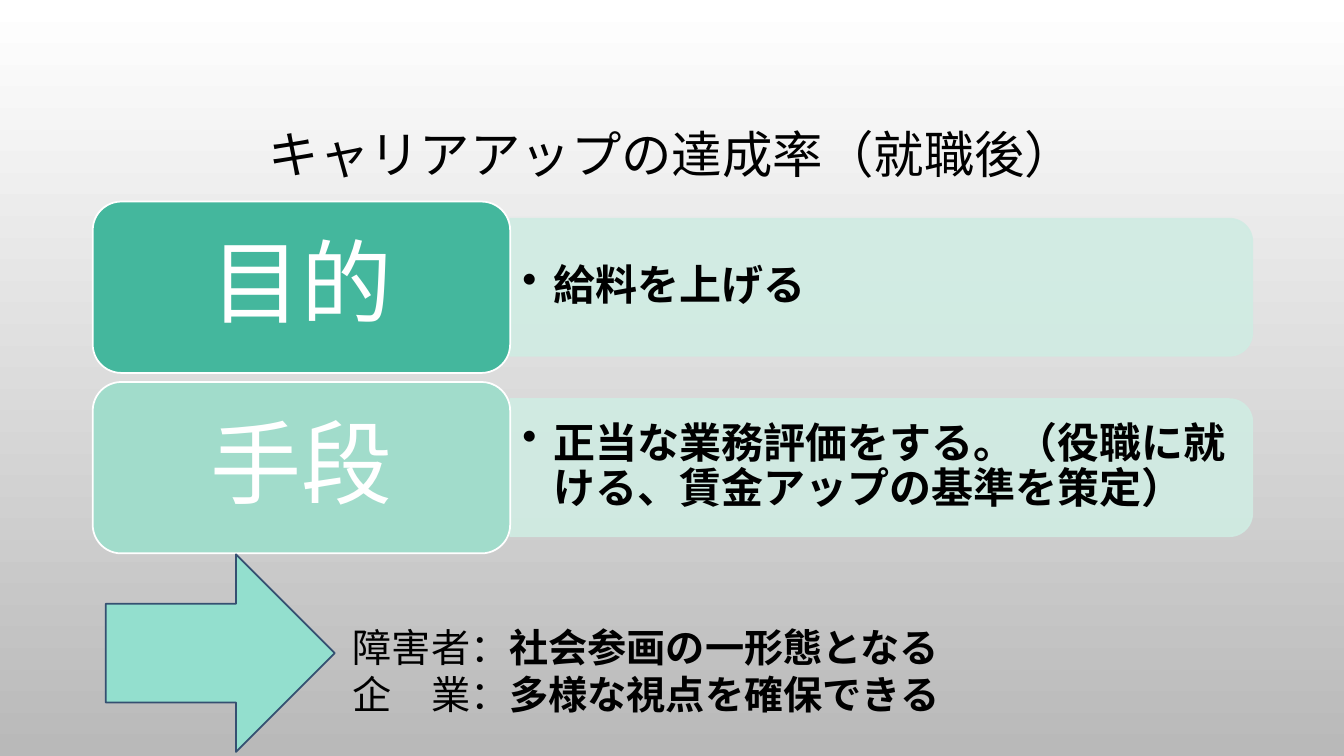
from lxml.etree import SubElement
from pptx import Presentation
from pptx.dml.color import RGBColor
from pptx.enum.shapes import MSO_SHAPE as Shape
from pptx.enum.text import MSO_ANCHOR as Anchor, PP_ALIGN as Align
from pptx.oxml.ns import qn
from pptx.util import Inches, Pt

FONT = "Cabin"
BLACK, WHITE, PANEL = "000000", "FFFFFF", "D0ECE3"
CARD_LEFT, CARD_TOP, CARD_WIDTH, CARD_HEIGHT = 0.92, 2, 4.14, 1.7
ROW_PITCH = 1.79
PANEL_WIDTH, PANEL_HEIGHT = 7.36, 1.36
ROWS = [
    ("目的", "44B79D", "給料を上げる"),
    ("手段", "A1DCCB", "正当な業務評価をする。（役職に就ける、賃金アップの基準を策定）"),
]
OUTCOMES = [
    [("障害者：", False), ("社会参画の一形態となる", True)],
    [("企　業：", False), ("多様な視点を確保できる", True)],
]


def rgb(color):
    return RGBColor.from_string(color)


def set_opacity(shape, percent):
    for color in list(shape.fill._xPr.iter(qn("a:srgbClr"))):
        SubElement(color, qn("a:alpha"), val=str(percent * 1000))


def add_bullet(paragraph, indent):
    properties = paragraph._p.get_or_add_pPr()
    properties.set("marL", str(Inches(indent)))
    properties.set("indent", str(-Inches(indent)))
    SubElement(properties, qn("a:buChar"), char="•")


def write_text(shape, paragraphs, size, color=BLACK, align=Align.LEFT,
               anchor=Anchor.MIDDLE, spacing=None, margins=(0.1, 0.05), bullet=None):
    frame = shape.text_frame
    frame.word_wrap = True
    frame.vertical_anchor = anchor
    frame.margin_left = frame.margin_right = Inches(margins[0])
    frame.margin_top = frame.margin_bottom = Inches(margins[1])
    for index, runs in enumerate(paragraphs):
        paragraph = frame.add_paragraph() if index else frame.paragraphs[0]
        paragraph.alignment = align
        if spacing:
            paragraph.line_spacing = spacing
        if bullet:
            add_bullet(paragraph, bullet)
        for text, bold in runs:
            run = paragraph.add_run()
            run.text = text
            run.font.name = FONT
            run.font.size = Pt(size)
            run.font.bold = bold
            run.font.color.rgb = rgb(color)


def add_text(slide, box, paragraphs, size, **text_format):
    shape = slide.shapes.add_textbox(*map(Inches, box))
    write_text(shape, paragraphs, size, **text_format)


def add_block(slide, kind, box, fill, line):
    shape = slide.shapes.add_shape(kind, *map(Inches, box))
    shape.shadow.inherit = False
    shape.fill.solid()
    shape.fill.fore_color.rgb = rgb(fill)
    shape.line.color.rgb = rgb(line)
    shape.line.width = Pt(1.25)
    return shape


def add_panel(slide, left, middle):
    box = (left + (PANEL_WIDTH - PANEL_HEIGHT) / 2, middle - PANEL_WIDTH / 2,
           PANEL_HEIGHT, PANEL_WIDTH)
    panel = add_block(slide, Shape.ROUND_2_SAME_RECTANGLE, box, PANEL, PANEL)
    panel.rotation = 90
    set_opacity(panel, 90)


def add_row(slide, index, label, color, detail):
    top = CARD_TOP + index * ROW_PITCH
    middle = top + CARD_HEIGHT / 2
    left = CARD_LEFT + CARD_WIDTH
    add_panel(slide, left, middle)
    add_text(slide, (left, middle - 0.62, 7.29, 1.23), [[(detail, True)]], 30,
             spacing=0.9, margins=(0.12, 0.06), bullet=0.31)
    card = add_block(slide, Shape.ROUNDED_RECTANGLE,
                     (CARD_LEFT, top, CARD_WIDTH, CARD_HEIGHT), color, WHITE)
    write_text(card, [[(label, False)]], 65, color=WHITE, align=Align.CENTER,
               spacing=0.9, margins=(0.19, 0.06))


def set_background(slide, colors):
    fill = slide.background.fill
    fill.gradient()
    fill.gradient_angle = 270
    for position, (stop, color) in enumerate(zip(fill.gradient_stops, colors)):
        stop.position = position
        stop.color.rgb = rgb(color)


def main():
    presentation = Presentation()
    presentation.slide_width = Inches(13.33)
    presentation.slide_height = Inches(7.5)
    slide = presentation.slides.add_slide(presentation.slide_layouts[6])
    set_background(slide, (WHITE, "B9B9B9"))
    add_text(slide, (1, 0.68, 11.33, 1.75), [[("キャリアアップの達成率（就職後）", False)]],
             36, align=Align.CENTER, spacing=0.9)
    for index, row in enumerate(ROWS):
        add_row(slide, index, *row)
    add_text(slide, (3.4, 6.13, 9.11, 1.03), OUTCOMES, 28, anchor=Anchor.TOP)
    add_block(slide, Shape.RIGHT_ARROW, (1.05, 5.5, 2.27, 1.96), "93DFCE", "355071")
    presentation.save("out.pptx")


if __name__ == "__main__":
    main()
